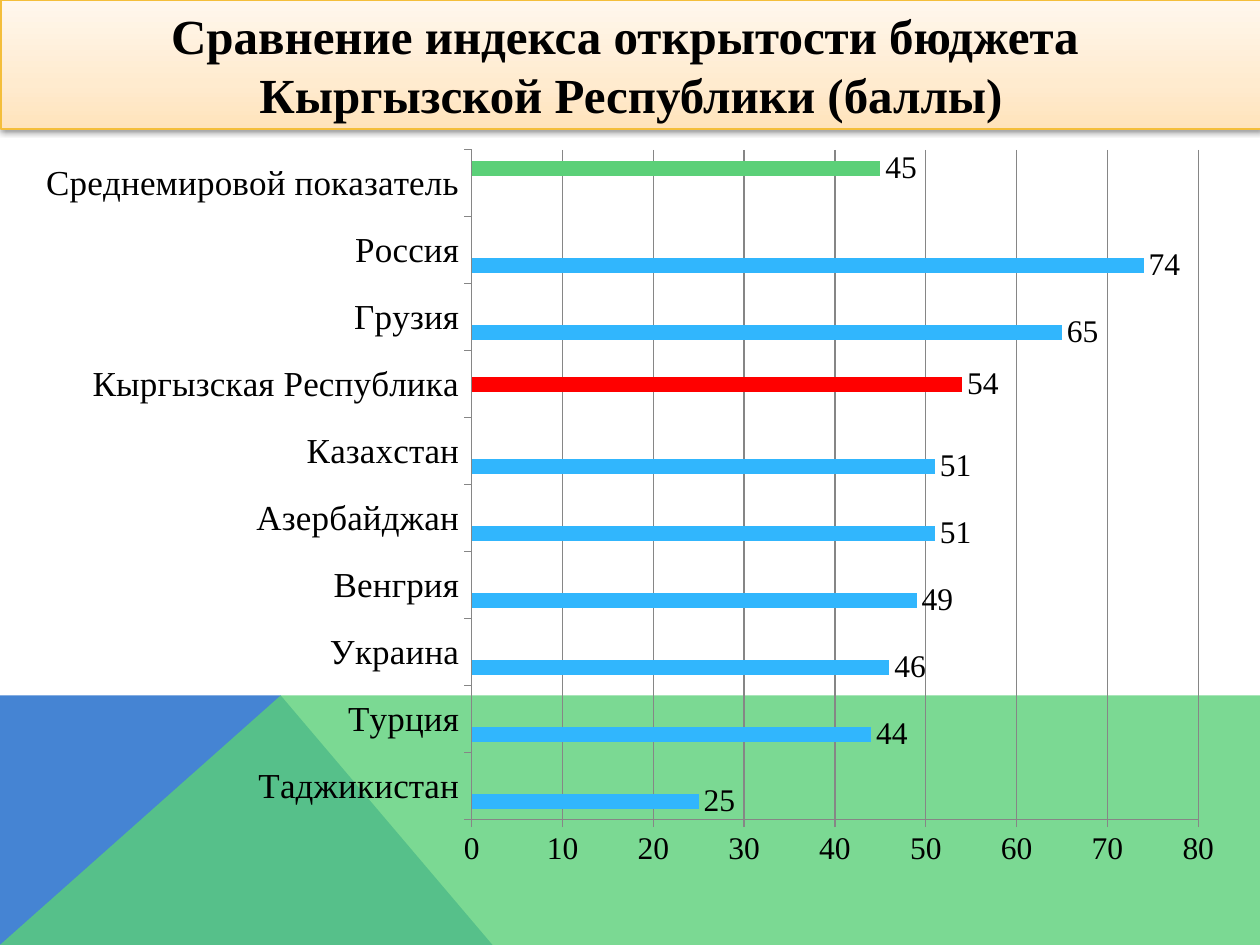
from lxml import etree
from pptx import Presentation
from pptx.chart.data import CategoryChartData
from pptx.dml.color import RGBColor
from pptx.enum import chart as c, text as t
from pptx.oxml import parse_xml
from pptx.oxml.ns import nsdecls
from pptx.util import Cm, Pt

FONT = "Times New Roman"
TITLE = ["Сравнение индекса открытости бюджета ", "Кыргызской Республики (баллы)"]
GROUPS = {"Series 1": "31B6FD", "Series 2": "FF0000", "Series 3": "5BD078"}
SCORES = [  # country, score, group, bottom to top
    ("Таджикистан", 25, "Series 1"),
    ("Турция", 44, "Series 1"),
    ("Украина", 46, "Series 1"),
    ("Венгрия", 49, "Series 1"),
    ("Азербайджан", 51, "Series 1"),
    ("Казахстан", 51, "Series 1"),
    ("Кыргызская Республика", 54, "Series 2"),
    ("Грузия", 65, "Series 1"),
    ("Россия", 74, "Series 1"),
    ("Среднемировой показатель", 45, "Series 3"),
]
WIDTH, HEIGHT = 25.4, 19.05
BAND_TOP, PEAK, FOOT = 14.02, 5.66, 9.93
BAND_SHAPES = [  # colour, opacity in percent, corners in cm
    ("4584D3", 100, [(0, HEIGHT), (0, BAND_TOP), (PEAK, BAND_TOP), (FOOT, HEIGHT)]),
    ("5BD078", 80, [(0, HEIGHT), (PEAK, BAND_TOP), (WIDTH, BAND_TOP), (WIDTH, HEIGHT)]),
]
TITLE_STOPS = [(0, "FFE3BB"), (35, "FFEBCF"), (100, "FFF7ED")]
PLOT_LAYOUT = {"x": 0.37, "y": 0.02, "w": 0.6, "h": 0.9}


def color(value):
    return RGBColor.from_string(value)


def place(shape, left, top, width, height):
    box = {"left": left, "top": top, "width": width, "height": height}
    for name, value in box.items():
        setattr(shape, name, Cm(value))


def format_font(font, size, bold=False):
    values = {"name": FONT, "size": Pt(size), "bold": bold}
    for name, value in values.items():
        setattr(font, name, value)
    font.color.rgb = color("000000")


def add_band_shape(slide, fill, opacity, corners):
    points = [(Cm(x), Cm(y)) for x, y in corners]
    builder = slide.shapes.build_freeform(*points[0])
    builder.add_line_segments(points[1:], close=True)
    shape = builder.convert_to_shape()
    shape.shadow.inherit = False
    shape.line.fill.background()
    shape.fill.solid()
    shape.fill.fore_color.rgb = color(fill)
    if opacity < 100:
        tint = shape.fill._xPr.find(".//{*}srgbClr")
        tint.append(parse_xml(f'<a:alpha {nsdecls("a")} val="{opacity * 1000}"/>'))


def add_chart(slide):
    data = CategoryChartData()
    data.categories = [country for country, _, _ in SCORES]
    for name in GROUPS:
        data.add_series(name, [score if group == name else None
                               for _, score, group in SCORES])
    frame = slide.shapes.add_chart(c.XL_CHART_TYPE.BAR_CLUSTERED,
                                   Cm(0.48), Cm(2.72), Cm(24.41), Cm(15.01), data)
    chart = frame.chart
    chart.has_legend = chart.has_title = False
    format_font(chart.font, 18)
    plot = chart.plots[0]
    plot.gap_width, plot.overlap, plot.vary_by_categories = 150, 0, False
    for series in plot.series:
        series.format.fill.solid()
        series.format.fill.fore_color.rgb = color(GROUPS[series.name])
        labels = series.data_labels
        labels.show_value = True
        labels.position = c.XL_LABEL_POSITION.OUTSIDE_END
        format_font(labels.font, 18)
    value_axis, category_axis = chart.value_axis, chart.category_axis
    for name, value in {"minimum_scale": 0, "maximum_scale": 80, "major_unit": 10,
                        "has_major_gridlines": True}.items():
        setattr(value_axis, name, value)
    for axis, size in ((value_axis, 18), (category_axis, 20)):
        axis.major_tick_mark = c.XL_TICK_MARK.OUTSIDE
        format_font(axis.tick_labels.font, size)
    for lines in (value_axis, category_axis, value_axis.major_gridlines):
        lines.format.line.color.rgb = color("868686")
        lines.format.line.width = Pt(0.75)
    set_plot_layout(chart)


def set_plot_layout(chart):
    plot_area = chart._chartSpace.chart.plotArea
    for old in plot_area.findall("{*}layout"):
        plot_area.remove(old)
    sizes = "".join(f'<c:{side} val="{value}"/>' for side, value in PLOT_LAYOUT.items())
    plot_area.insert(0, parse_xml(
        f'<c:layout {nsdecls("c")}><c:manualLayout><c:layoutTarget val="inner"/>'
        f'<c:xMode val="edge"/><c:yMode val="edge"/>{sizes}'
        '</c:manualLayout></c:layout>'))


def format_title(title):
    place(title, 0.02, 0, WIDTH, 2.6)
    title.line.color.rgb = color("F4BE3A")
    title.line.width = Pt(0.75)
    stops = "".join(f'<a:gs pos="{position * 1000}"><a:srgbClr val="{value}"/></a:gs>'
                    for position, value in TITLE_STOPS)
    properties = title._element.spPr
    properties.find("{*}ln").addprevious(parse_xml(
        f'<a:gradFill {nsdecls("a")}><a:gsLst>{stops}</a:gsLst>'
        '<a:lin ang="16200000" scaled="0"/></a:gradFill>'))
    effects = etree.SubElement(properties, properties.find("{*}ln").tag[:-2] + "effectLst")
    effects.append(parse_xml(
        f'<a:outerShdw {nsdecls("a")} blurRad="{Pt(3.1)}" dist="{Pt(1.6)}" '
        'dir="5400000" rotWithShape="0"><a:srgbClr val="000000">'
        '<a:alpha val="38000"/></a:srgbClr></a:outerShdw>'))
    frame = title.text_frame
    frame.text = "\n".join(TITLE)
    for name, value in {"word_wrap": True, "auto_size": t.MSO_AUTO_SIZE.NONE,
                        "vertical_anchor": t.MSO_ANCHOR.MIDDLE}.items():
        setattr(frame, name, value)
    for paragraph in frame.paragraphs:
        paragraph.alignment = t.PP_ALIGN.CENTER
        format_font(paragraph.runs[0].font, 28, bold=True)


def main():
    presentation = Presentation()
    presentation.slide_width, presentation.slide_height = Cm(WIDTH), Cm(HEIGHT)
    slide = presentation.slides.add_slide(presentation.slide_layouts[5])
    for band_shape in BAND_SHAPES:
        add_band_shape(slide, *band_shape)
    add_chart(slide)
    title = slide.shapes.title
    format_title(title)
    slide.shapes._spTree.append(title._element)  # in front of the chart
    presentation.save("out.pptx")


if __name__ == "__main__":
    main()
